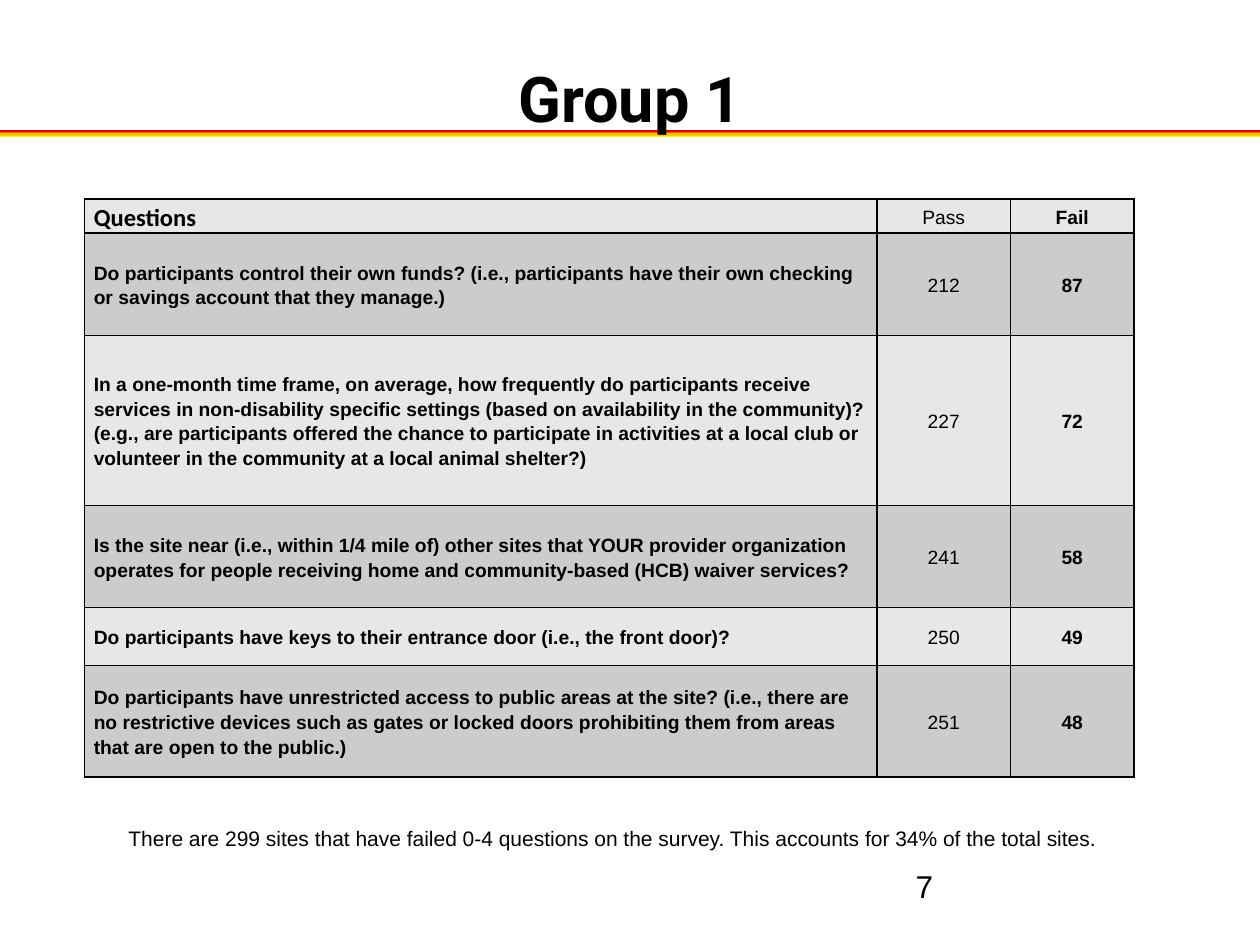
from lxml.etree import SubElement
from pptx import Presentation
from pptx.dml.color import RGBColor
from pptx.enum.shapes import MSO_SHAPE
from pptx.enum.text import MSO_ANCHOR, PP_ALIGN
from pptx.oxml.ns import qn
from pptx.util import Cm, Pt

COLORS = {
    "ink": "000000",
    "light": "E7E7E7",
    "dark": "CCCCCC",
    "deep_red": "C00000",
    "red": "FF0000",
    "amber": "FFC000",
    "yellow": "FFFF00",
}
RULE_STOPS = [(0, "deep_red"), (30, "red"), (54, "amber"), (84, "amber"), (100, "yellow")]
COLUMN_WIDTHS = [15.98, 2.69, 2.49]
ROW_HEIGHTS = [0.69, 2.06, 3.43, 2.06, 1.17, 2.24]
ROWS = [
    ("Questions", "Pass", "Fail"),
    ("Do participants control their own funds? (i.e., participants have their own "
     "checking or savings account that they manage.)", "212", "87"),
    ("In a one-month time frame, on average, how frequently do participants receive "
     "services in non-disability specific settings (based on availability in the "
     "community)? (e.g., are participants offered the chance to participate in "
     "activities at a local club or volunteer in the community at a local animal "
     "shelter?)", "227", "72"),
    ("Is the site near (i.e., within 1/4 mile of) other sites that YOUR provider "
     "organization operates for people receiving home and community-based (HCB) "
     "waiver services?", "241", "58"),
    ("Do participants have keys to their entrance door (i.e., the front door)?",
     "250", "49"),
    ("Do participants have unrestricted access to public areas at the site? (i.e., "
     "there are no restrictive devices such as gates or locked doors prohibiting "
     "them from areas that are open to the public.)", "251", "48"),
]


def color(name):
    return RGBColor.from_string(COLORS[name])


def write(frame, text, size, font="Arial", bold=False, align=PP_ALIGN.LEFT, spacing=None):
    frame.word_wrap = True
    para = frame.paragraphs[0]
    para.alignment = align
    para.line_spacing = spacing
    span = para.add_run()
    span.text = text
    span.font.name = font
    span.font.size = Pt(size)
    span.font.bold = bold
    span.font.color.rgb = color("ink")


def add_text(page, left, top, width, height, text, size, **style):
    box = page.shapes.add_textbox(Cm(left), Cm(top), Cm(width), Cm(height))
    write(box.text_frame, text, size, **style)


def add_rule(page, left, top, width, height):
    """Draw the band under the title, fading downwards from red to yellow."""
    rule = page.shapes.add_shape(
        MSO_SHAPE.RECTANGLE, Cm(left), Cm(top), Cm(width), Cm(height))
    rule.shadow.inherit = False
    rule.line.fill.background()
    rule.fill.gradient()
    rule.fill.gradient_angle = 270
    stops = rule._element.spPr.find(qn("a:gradFill")).find(qn("a:gsLst"))
    for stop in list(stops):
        stops.remove(stop)
    for percent, name in RULE_STOPS:
        stop = SubElement(stops, qn("a:gs"), pos=str(percent * 1000))
        SubElement(stop, qn("a:srgbClr"), val=COLORS[name])


def add_borders(cell):
    properties = cell._tc.get_or_add_tcPr()
    for side in ("lnL", "lnR", "lnT", "lnB"):
        line = SubElement(properties, qn(f"a:{side}"), w=str(Pt(1)))
        fill = SubElement(line, qn("a:solidFill"))
        SubElement(fill, qn("a:srgbClr"), val=COLORS["ink"])


def style_cell(cell, shade):
    add_borders(cell)
    cell.fill.solid()
    cell.fill.fore_color.rgb = color(shade)
    cell.vertical_anchor = MSO_ANCHOR.MIDDLE
    cell.margin_left = cell.margin_right = Cm(0.19)
    cell.margin_top = cell.margin_bottom = 0


def add_results(page, left, top):
    """Place the table of questions with their pass and fail counts."""
    table = page.shapes.add_table(
        len(ROWS), len(COLUMN_WIDTHS), Cm(left), Cm(top),
        Cm(sum(COLUMN_WIDTHS)), Cm(sum(ROW_HEIGHTS))).table
    table.first_row = table.horz_banding = False
    for column, width in zip(table.columns, COLUMN_WIDTHS):
        column.width = Cm(width)
    for r, (values, height) in enumerate(zip(ROWS, ROW_HEIGHTS)):
        table.rows[r].height = Cm(height)
        for c, text in enumerate(values):
            cell = table.cell(r, c)
            style_cell(cell, "dark" if r % 2 else "light")
            heading = r == 0 and c == 0
            write(cell.text_frame, text, 14 if heading else 11,
                  font="Calibri" if heading else "Arial", bold=c != 1,
                  align=PP_ALIGN.CENTER if c else PP_ALIGN.LEFT, spacing=1.15)


def main():
    deck = Presentation()
    deck.slide_width, deck.slide_height = Cm(25.4), Cm(19.05)
    page = deck.slides.add_slide(deck.slide_layouts[6])
    add_rule(page, 0, 2.62, 25.4, 0.13)
    add_text(page, 18.21, 17.35, 5.92, 1.32, "7", 18)
    add_results(page, 1.7, 4.01)
    add_text(page, 2.54, 0.84, 20.32, 1.96, "Group 1", 36, font="Roboto",
             bold=True, align=PP_ALIGN.CENTER, spacing=1.15)
    add_text(page, 2.34, 16.51, 20.24, 1.37,
             "There are 299 sites that have failed 0-4 questions on the survey. "
             "This accounts for 34% of the total sites.", 12)
    deck.save("out.pptx")


if __name__ == "__main__":
    main()
